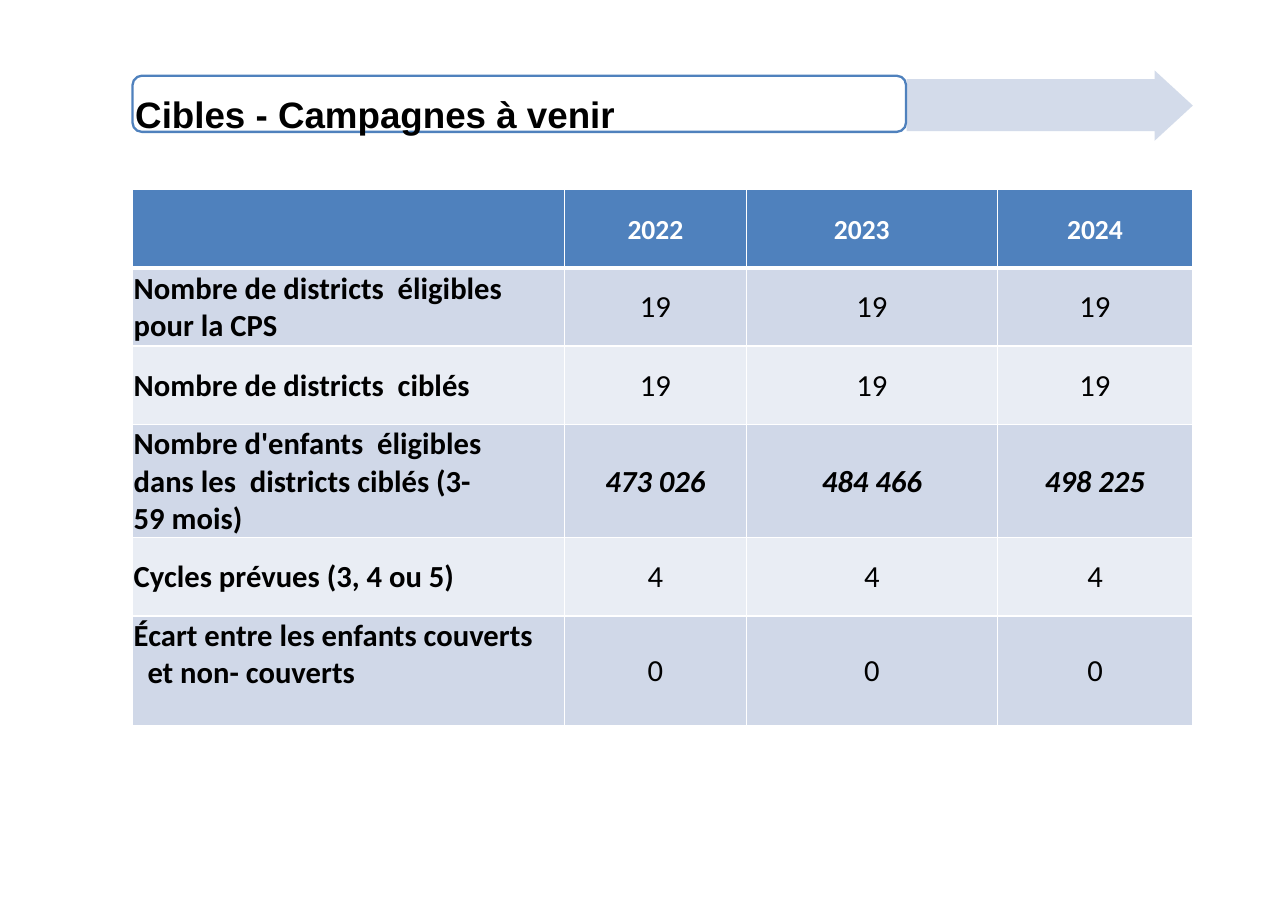
from dataclasses import dataclass

from lxml import etree
from pptx import Presentation
from pptx import util as u
from pptx.dml.color import RGBColor
from pptx.enum import shapes, text
from pptx.oxml import ns


@dataclass(frozen=True)
class Theme:
    accent: str = "4F81BD"
    arrow: str = "CFD8E8"
    bands: tuple = ("D0D8E8", "E9EDF4")
    black: str = "000000"
    white: str = "FFFFFF"
    title_font: str = "Arial"
    body_font: str = "Calibri"
    title_size: float = 24
    header_size: float = 18
    body_size: float = 20


COLUMN_WIDTHS = (282.24, 118.8, 164.16, 127.44)
ROW_HEIGHTS = (51.12, 51.12, 51.12, 73.6, 51.12, 71.6)
HEADERS = ("", "2022", "2023", "2024")
ROWS = (
    ("Nombre de districts  éligibles pour la CPS", "19", "19", "19"),
    ("Nombre de districts  ciblés", "19", "19", "19"),
    ("Nombre d'enfants  éligibles \vdans les  districts ciblés (3-\v59 mois)",
     "473 026", "484 466", "498 225"),
    ("Cycles prévues (3, 4 ou 5)", "4", "4", "4"),
    ("Écart entre les enfants couverts et non- couverts", "0", "0", "0"),
)
CHILDREN_ROW, GAP_ROW = 3, 5
ARROW_POINTS = ((592.5, 51.8), (754.5, 51.8), (754.5, 46), (779.5, 69),
                (754.5, 92), (754.5, 85.7), (592.5, 85.7))


def set_all(target, values):
    for name, value in values.items():
        setattr(target, name, value)


class SlideBuilder:
    def __init__(self, presentation, theme):
        self.theme = theme
        self.slide = presentation.slides.add_slide(presentation.slide_layouts[6])

    def fill_paragraph(self, paragraph, content, color, align=text.PP_ALIGN.LEFT, **font):
        paragraph.text = content
        paragraph.alignment = align
        for run in paragraph.runs:
            set_all(run.font, font)
            run.font.color.rgb = RGBColor.from_string(color)

    def arrow(self, points, color, opacity):
        corners = [(u.Pt(x), u.Pt(y)) for x, y in points]
        builder = self.slide.shapes.build_freeform(*corners[0], scale=1.0)
        builder.add_line_segments(corners[1:], close=True)
        shape = builder.convert_to_shape()
        shape.shadow.inherit = False
        shape.line.fill.background()
        shape.fill.solid()
        shape.fill.fore_color.rgb = RGBColor.from_string(color)
        fill_color = shape._element.spPr.find(".//" + ns.qn("a:srgbClr"))
        etree.SubElement(fill_color, ns.qn("a:alpha"), val=str(opacity * 1000))

    def title(self, content, left, top, width, height):
        shape = self.slide.shapes.add_shape(
            shapes.MSO_SHAPE.ROUNDED_RECTANGLE,
            *(u.Pt(length) for length in (left, top, width, height)))
        shape.shadow.inherit = False
        shape.fill.background()
        shape.line.color.rgb = RGBColor.from_string(self.theme.accent)
        shape.line.width = u.Pt(1.5)
        set_all(shape.text_frame, {
            "margin_left": 0, "margin_right": 0, "margin_bottom": 0,
            "margin_top": u.Pt(9), "word_wrap": True,
            "vertical_anchor": text.MSO_ANCHOR.TOP})
        self.fill_paragraph(
            shape.text_frame.paragraphs[0], content, self.theme.black,
            name=self.theme.title_font, size=u.Pt(self.theme.title_size), bold=True)

    def borders(self, cell, widths):
        """Draw white edges; widths maps L, R, T, B to points."""
        properties = cell._tc.get_or_add_tcPr()
        for side, width in widths.items():
            line = etree.SubElement(properties, ns.qn("a:ln" + side), w=str(u.Pt(width)))
            fill = etree.SubElement(line, ns.qn("a:solidFill"))
            etree.SubElement(fill, ns.qn("a:srgbClr"), val=self.theme.white)

    def cell(self, cell, content, row, column):
        theme = self.theme
        header, label = row == 0, column == 0
        top, bottom = (3 if row == 1 else 1), (3 if header else 1)
        self.borders(cell, {"L": 1, "R": 1, "T": top, "B": bottom})
        cell.fill.solid()
        cell.fill.fore_color.rgb = RGBColor.from_string(
            theme.accent if header else theme.bands[(row - 1) % 2])
        gap_label = label and row == GAP_ROW
        set_all(cell, {
            "margin_left": u.Pt(0.7), "margin_bottom": 0,
            "margin_right": u.Pt(14 if header and column == 2 else 0.7),
            "margin_top": u.Pt(2 if header else 0.7),
            "vertical_anchor": text.MSO_ANCHOR.TOP if gap_label else text.MSO_ANCHOR.MIDDLE})
        paragraph = cell.text_frame.paragraphs[0]
        self.fill_paragraph(
            paragraph, content, theme.white if header else theme.black,
            text.PP_ALIGN.LEFT if label else text.PP_ALIGN.CENTER,
            name=theme.body_font,
            size=u.Pt(theme.header_size if header else theme.body_size),
            bold=header or label or row == CHILDREN_ROW,
            italic=row == CHILDREN_ROW and not label)
        if gap_label:
            hanging = u.Pt(9)
            for name, value in (("marL", hanging), ("indent", -hanging)):
                paragraph._p.get_or_add_pPr().set(name, str(value))

    def table(self, rows, left, top, widths, heights):
        table = self.slide.shapes.add_table(
            len(rows), len(widths), u.Pt(left), u.Pt(top),
            u.Pt(sum(widths)), u.Pt(sum(heights))).table
        set_all(table, {"first_row": False, "horz_banding": False})
        for column, width in zip(table.columns, widths):
            column.width = u.Pt(width)
        for index, (row, height) in enumerate(zip(rows, heights)):
            table.rows[index].height = u.Pt(height)
            for column, content in enumerate(row):
                self.cell(table.cell(index, column), content, index, column)


def main():
    presentation = Presentation()
    set_all(presentation, {"slide_width": u.Pt(841.68), "slide_height": u.Pt(595.44)})
    builder = SlideBuilder(presentation, Theme())
    builder.table((HEADERS,) + ROWS, 86.7, 124, COLUMN_WIDTHS, ROW_HEIGHTS)
    builder.arrow(ARROW_POINTS, builder.theme.arrow, 90)
    builder.title("Cibles - Campagnes à venir", 86.6, 49.5, 505.5, 36.7)
    presentation.save("out.pptx")


if __name__ == "__main__":
    main()
